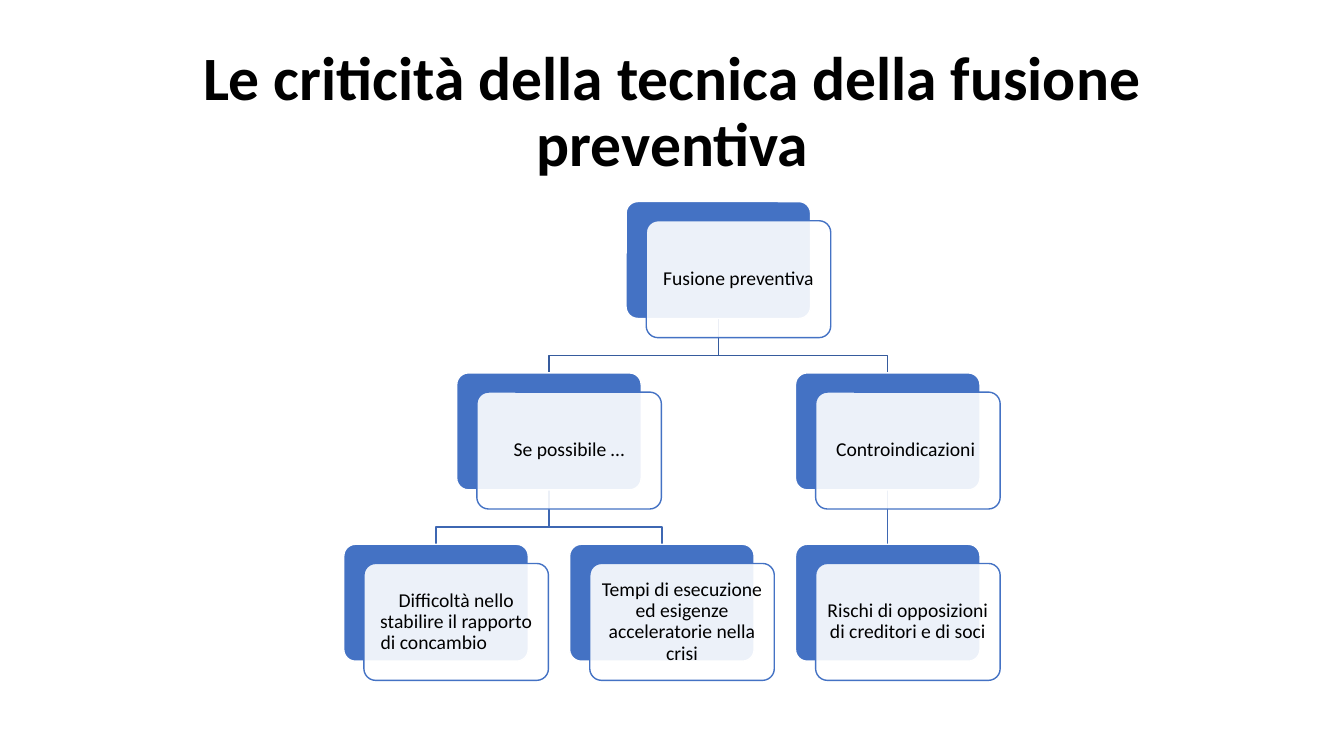
from lxml.etree import SubElement as Sub
from pptx import Presentation
from pptx.dml.color import RGBColor as Rgb
from pptx.enum.shapes import MSO_CONNECTOR as Link, MSO_SHAPE as Kind
from pptx.enum.text import MSO_ANCHOR as Anchor, PP_ALIGN as Align
from pptx.oxml.ns import qn
from pptx.util import Inches as In, Pt

HUE = {"blue": "4472C4", "white": "FFFFFF", "black": "000000",
       "upper": "365B9D", "lower": "3E67B2"}
LEFT, TOP = 3.41, 2
COL, ROW = 1.12, 1.7
WIDE, HIGH = 1.83, 1.16
SHIFT = 0.2
BEND = 0.37

NODES = {
    "root": (2.5, 0, "Fusione preventiva"),
    "able": (1, 1, "Se possibile …"),
    "ratio": (0, 2, "Difficoltà nello stabilire il rapporto di concambio\t"),
    "time": (2, 2, "Tempi di esecuzione ed esigenze acceleratorie nella crisi"),
    "contra": (4, 1, "Controindicazioni "),
    "risk": (4, 2, "Rischi di opposizioni di creditori e di soci"),
}
EDGES = [("root", "able"), ("able", "ratio"), ("able", "time"),
         ("root", "contra"), ("contra", "risk")]


def write(frame, text, size, bold=False):
    frame.word_wrap = True
    frame.vertical_anchor = Anchor.MIDDLE
    para = frame.paragraphs[0]
    para.alignment = Align.CENTER
    para.line_spacing = 0.9
    run = para.add_run()
    run.text = text
    run.font.name = "Calibri"
    run.font.size = Pt(size)
    run.font.bold = bold
    run.font.color.rgb = Rgb.from_string(HUE["black"])


def card(x, y, fill, edge):
    box = shapes.add_shape(Kind.ROUNDED_RECTANGLE, In(x), In(y), In(WIDE), In(HIGH))
    box.adjustments[0] = 0.1
    box.shadow.inherit = False
    box.fill.solid()
    box.fill.fore_color.rgb = Rgb.from_string(HUE[fill])
    box.line.color.rgb = Rgb.from_string(HUE[edge])
    box.line.width = Pt(1)
    return box


deck = Presentation()
deck.slide_width, deck.slide_height = In(13.33), In(7.5)
slide = deck.slides.add_slide(deck.slide_layouts[5])
shapes = slide.shapes

title = shapes.title
title.left, title.top, title.width, title.height = In(0.92), In(0.4), In(11.5), In(1.45)
write(title.text_frame, "Le criticità della tecnica della fusione preventiva", 44, True)

backs = {}
for name, (col, row, text) in NODES.items():
    x, y = LEFT + col * COL, TOP + row * ROW
    backs[name] = card(x, y, "blue", "white")
    front = card(x + SHIFT, y + SHIFT - 0.01, "white", "blue")
    tint = front.fill._xPr.find(qn("a:solidFill"))[0]
    Sub(tint, qn("a:alpha"), val="90000")
    frame = front.text_frame
    frame.margin_left = frame.margin_right = In(0.06)
    frame.margin_top = frame.margin_bottom = In(0.06)
    write(frame, text, 14)

for head, tail in EDGES:
    start, end = backs[head], backs[tail]
    x, y = start.left + start.width // 2, start.top + start.height
    goal = end.left + end.width // 2
    if goal == x:
        line = shapes.add_connector(Link.STRAIGHT, x, y, goal, end.top)
        line.begin_connect(start, 2)
        line.end_connect(end, 0)
        Sub(line._element.spPr, qn("a:effectLst"))
    else:
        pen = shapes.build_freeform(x, y)
        pen.add_line_segments([(x, y + In(BEND)), (goal, y + In(BEND)),
                               (goal, end.top)], close=False)
        line = pen.convert_to_shape()
        line.fill.background()
        line.shadow.inherit = False
    line.line.color.rgb = Rgb.from_string(HUE["upper" if head == "root" else "lower"])
    line.line.width = Pt(1)
    title._element.addnext(line._element)

deck.save("out.pptx")
